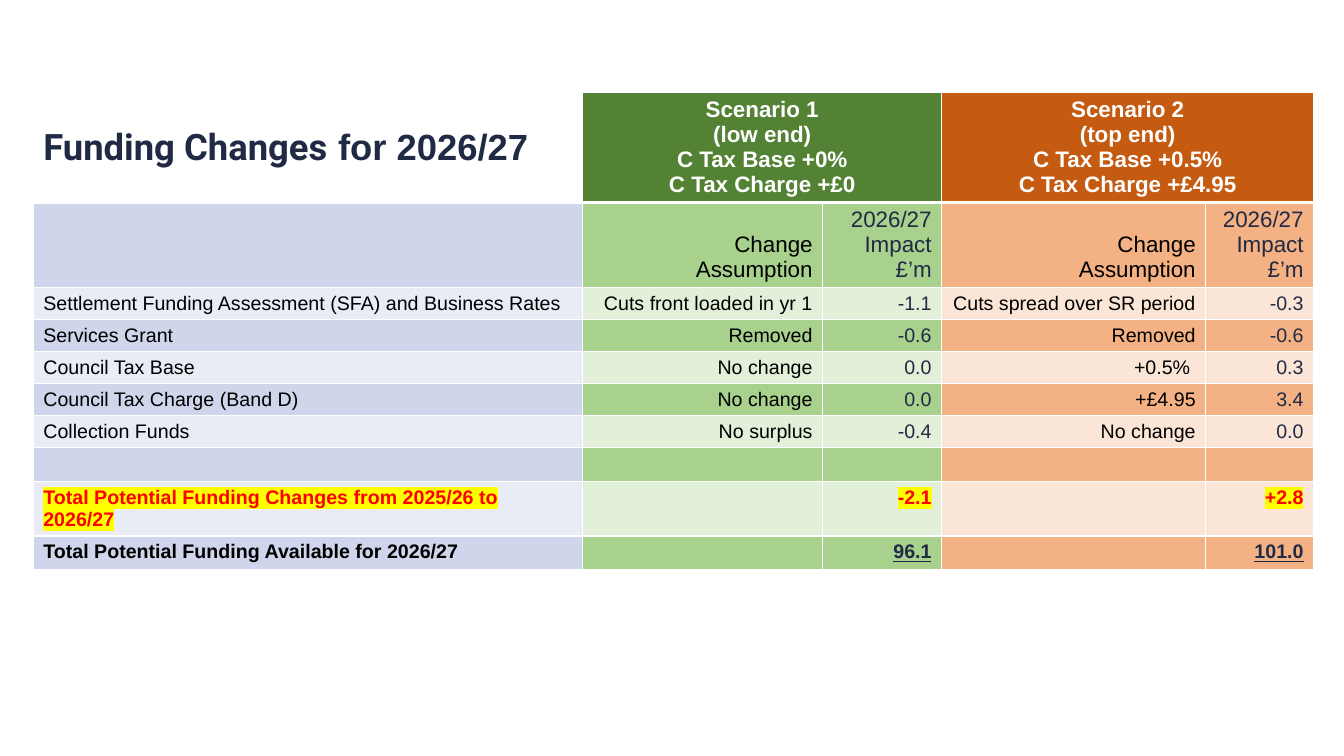
from dataclasses import dataclass
from lxml.etree import SubElement
from pptx import Presentation
from pptx.dml.color import RGBColor as RGB
from pptx.enum.text import MSO_ANCHOR as ANCHOR, PP_ALIGN as ALIGN
from pptx.oxml import parse_xml
from pptx.oxml.ns import nsdecls, qn
from pptx.util import Inches, Pt


@dataclass(frozen=True)
class Theme:
    font: str = "Arial"
    title_font: str = "Roboto"
    title_size: int = 26
    head_size: int = 16
    body_size: int = 14
    navy: str = "202A44"
    black: str = "000000"
    white: str = "FFFFFF"
    red: str = "FF0000"
    yellow: str = "FFFF00"
    scenario_fills: tuple = ("548235", "C55A11")
    light: tuple = ("E9EBF5", "E2F0D9", "E2F0D9", "FBE5D6", "FBE5D6")
    dark: tuple = ("CFD5EA", "A9D18E", "A9D18E", "F4B183", "F4B183")


theme = Theme()


def style_run(r, size, color, bold=False, font=theme.font):
    r.font.name = font
    r.font.size = Pt(size)
    r.font.bold = bold
    r.font.color.rgb = RGB.from_string(color)


def frame_cell(cell, top, bottom, fill):
    tcPr = cell._tc.get_or_add_tcPr()
    for side, width in (("L", 1), ("R", 1), ("T", top), ("B", bottom)):
        tcPr.append(parse_xml(
            f'<a:ln{side} {nsdecls("a")} w="{Pt(width)}"><a:solidFill>'
            f'<a:srgbClr val="{theme.white}"/></a:solidFill></a:ln{side}>'))
    if fill:
        cell.fill.solid()
        cell.fill.fore_color.rgb = RGB.from_string(fill)
    else:
        cell.fill.background()


impact = "2026/27\nImpact\n£’m"
assumption = "Change\nAssumption"
rows = [
    ("", "Scenario 1\n(low end)\nC Tax Base +0%\nC Tax Charge +£0", "",
     "Scenario 2\n(top end)\nC Tax Base +0.5%\nC Tax Charge +£4.95", ""),
    ("", assumption, impact, assumption, impact),
    ("Settlement Funding Assessment (SFA) and Business Rates",
     "Cuts front loaded in yr 1", "-1.1", "Cuts spread over SR period", "-0.3"),
    ("Services Grant", "Removed", "-0.6", "Removed", "-0.6"),
    ("Council Tax Base", "No change", "0.0", "+0.5% ", "0.3"),
    ("Council Tax Charge (Band D)", "No change", "0.0", "+£4.95", "3.4"),
    ("Collection Funds", "No surplus", "-0.4", "No change", "0.0"),
    ("", "", "", "", ""),
    ("Total Potential Funding Changes from 2025/26 to 2026/27", "", "-2.1", "", "+2.8"),
    ("Total Potential Funding Available for 2026/27", "", "96.1", "", "101.0"),
]
col_widths = (5.45, 2.38, 1.18, 2.62, 1.07)
row_heights = [0.88, 0.82] + [0.31] * 8
change_row, available_row = 8, 9

prs = Presentation()
prs.slide_width, prs.slide_height = Inches(13.33), Inches(7.5)
slide = prs.slides.add_slide(prs.slide_layouts[6])

table = slide.shapes.add_table(
    len(rows), len(col_widths), Inches(0.33), Inches(0.92),
    Inches(sum(col_widths)), Inches(sum(row_heights))).table
for column, width in zip(table.columns, col_widths):
    column.width = Inches(width)
for row, height in zip(table.rows, row_heights):
    row.height = Inches(height)
for col in (1, 3):
    table.cell(0, col).merge(table.cell(0, col + 1))

for i, texts in enumerate(rows):
    size = theme.head_size if i < 2 else theme.body_size
    if i == 0:
        fills = [None] + [f for f in theme.scenario_fills for _ in range(2)]
    else:
        fills = theme.dark if i % 2 else theme.light
    for j, text in enumerate(texts):
        cell = table.cell(i, j)
        frame_cell(cell, 3 if i == 1 else 1, 3 if i == 0 else 1, fills[j])
        if i == 1:
            cell.vertical_anchor = ANCHOR.BOTTOM
        cell.text_frame.text = text
        if i == 0:
            color = theme.white
        elif i == change_row:
            color = theme.red
        else:
            color = theme.navy if j in (2, 4) else theme.black
        for p in cell.text_frame.paragraphs:
            if j:
                p.alignment = ALIGN.RIGHT if i else ALIGN.CENTER
            for r in p.runs:
                style_run(r, size, color, i == 0 or i >= change_row)
                if i == change_row:
                    r._r.rPr.find(qn("a:solidFill")).addnext(parse_xml(
                        f'<a:highlight {nsdecls("a")}>'
                        f'<a:srgbClr val="{theme.yellow}"/></a:highlight>'))
                if i == available_row and j:
                    r.font.underline = True
            if not text:
                SubElement(p._p, qn("a:endParaRPr"), sz=str(size * 100))

title = table.cell(0, 0)
title.vertical_anchor = ANCHOR.MIDDLE
p = title.text_frame.paragraphs[0]
for text, font in (("Funding Changes", theme.title_font), (" for 2026/27", theme.font)):
    r = p.add_run()
    r.text = text
    style_run(r, theme.title_size, theme.navy, True, font)

prs.save("out.pptx")
